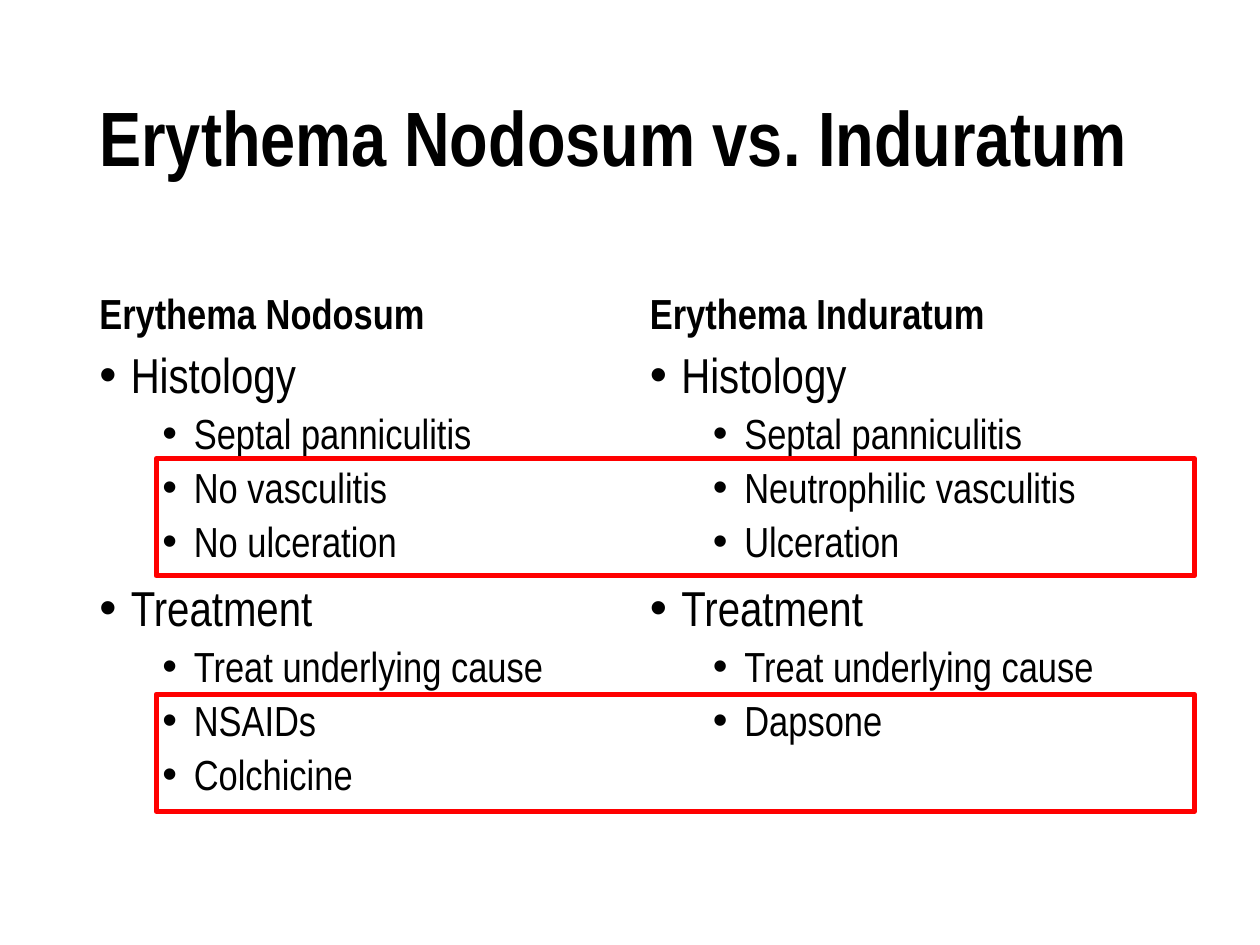
from lxml import etree
from pptx import Presentation, util as u
from pptx.dml.color import RGBColor
from pptx.enum import shapes, text
from pptx.oxml.ns import qn

FONT, BLACK, RED = "Arial Narrow", "000000", "FF0000"
TITLE = "Erythema Nodosum vs. Induratum"
COLUMNS = [
    ("Erythema Nodosum", [
        ("Histology", ["Septal panniculitis", "No vasculitis", "No ulceration"]),
        ("Treatment", ["Treat underlying cause", "NSAIDs", "Colchicine"]),
    ]),
    ("Erythema Induratum", [
        ("Histology", ["Septal panniculitis", "Neutrophilic vasculitis", "Ulceration"]),
        ("Treatment", ["Treat underlying cause", "Dapsone"]),
    ]),
]

WIDTH, HEIGHT = 10, 7.5
MARGIN = 0.69
TITLE_TOP, HEADING_TOP, LIST_TOP, LIST_BOTTOM = 0.4, 1.84, 2.74, 6.77
COLUMN_WIDTH, COLUMN_STEP = 4.24, 4.37
FRAME_LEFT, FRAME_WIDTH, FRAME_HEIGHT = 1.24, 8.24, 0.93
FRAME_TOPS = [3.64, 5.51]
# size, space before, left indent for each list level
LEVELS = [(28, 10, 0.25), (24, 5, 0.75)]
HANGING = 0.25


def color(code):
    return RGBColor.from_string(code)


def add_box(page, left, top, width, bottom, anchor):
    box = page.shapes.add_textbox(*map(u.Inches, (left, top, width, bottom - top)))
    frame = box.text_frame
    frame.word_wrap = True
    frame.vertical_anchor = anchor
    return frame


def write(para, words, size, before=0, bold=False):
    para.line_spacing = 0.9
    para.space_before = u.Pt(before)
    span = para.add_run()
    span.text = words
    span.font.name, span.font.size, span.font.bold = FONT, u.Pt(size), bold
    span.font.color.rgb = color(BLACK)


def add_bullet(para, indent):
    props = para._p.get_or_add_pPr()
    props.set("marL", str(u.Inches(indent)))
    props.set("indent", str(-u.Inches(HANGING)))
    etree.SubElement(props, qn("a:buFont")).set("typeface", "Arial")
    etree.SubElement(props, qn("a:buChar")).set("char", "•")


def write_list(frame, topics):
    lines = []
    for topic, points in topics:
        lines += [(topic, 0)] + [(point, 1) for point in points]
    for index, (words, level) in enumerate(lines):
        para = frame.add_paragraph() if index else frame.paragraphs[0]
        size, before, indent = LEVELS[level]
        para.level = level
        write(para, words, size, before)
        add_bullet(para, indent)


def add_frame(page, top):
    """Outline the rows in which the two conditions differ."""
    frame = page.shapes.add_shape(
        shapes.MSO_SHAPE.RECTANGLE,
        *map(u.Inches, (FRAME_LEFT, top, FRAME_WIDTH, FRAME_HEIGHT)))
    frame.shadow.inherit = False
    frame.fill.background()
    frame.line.color.rgb = color(RED)
    frame.line.width = u.Pt(3)


def main():
    deck = Presentation()
    deck.slide_width, deck.slide_height = u.Inches(WIDTH), u.Inches(HEIGHT)
    page = deck.slides.add_slide(deck.slide_layouts[6])
    anchors = text.MSO_ANCHOR

    title = add_box(page, MARGIN, TITLE_TOP, WIDTH - 2 * MARGIN, 1.85, anchors.MIDDLE)
    write(title.paragraphs[0], TITLE, 44, bold=True)

    for index, (heading, topics) in enumerate(COLUMNS):
        left = MARGIN + index * COLUMN_STEP
        head = add_box(page, left, HEADING_TOP, COLUMN_WIDTH, LIST_TOP, anchors.BOTTOM)
        write(head.paragraphs[0], heading, 24, 10, bold=True)
        body = add_box(page, left, LIST_TOP, COLUMN_WIDTH, LIST_BOTTOM, anchors.TOP)
        write_list(body, topics)

    for top in FRAME_TOPS:
        add_frame(page, top)
    deck.save("out.pptx")


if __name__ == "__main__":
    main()
